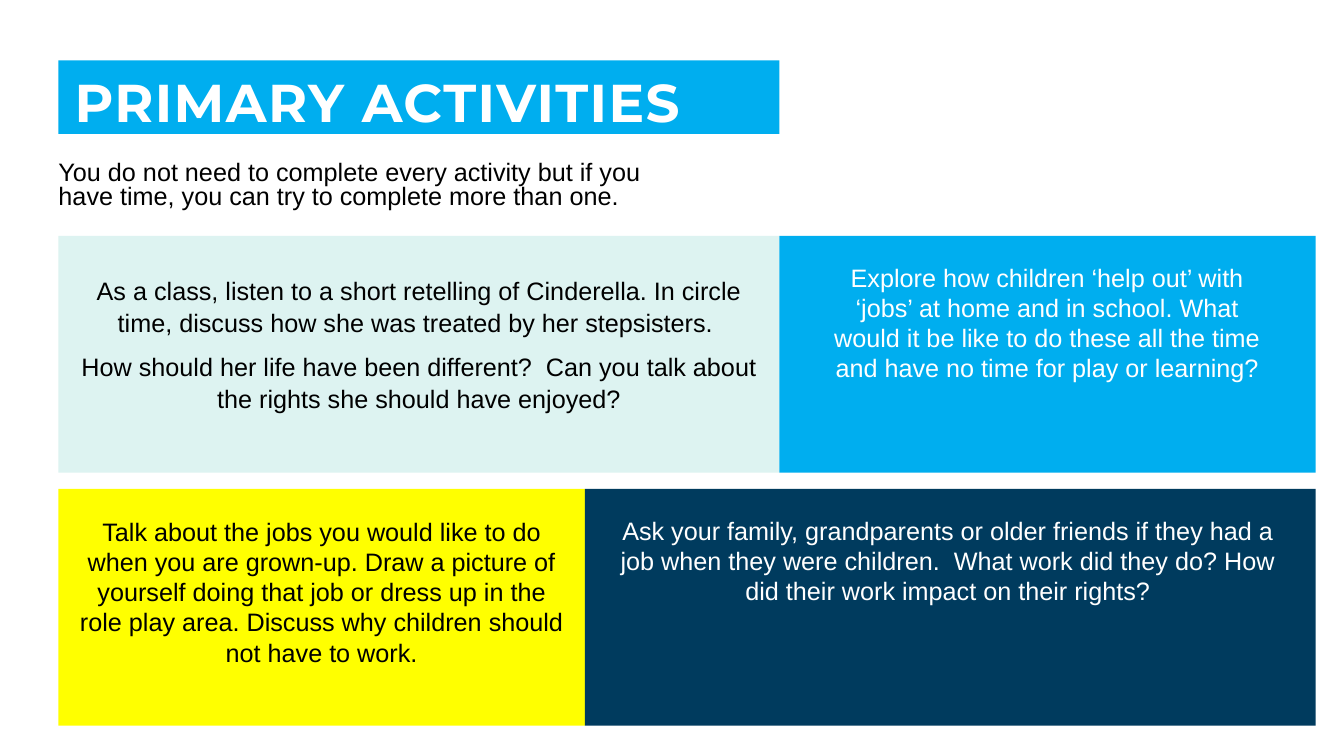
import pptx
import pptx.util
from pptx.dml.color import RGBColor
from pptx.enum.shapes import MSO_SHAPE
from pptx.enum.text import MSO_ANCHOR, PP_ALIGN

PX = 9144  # 100 px to the inch

BLACK = RGBColor(0x00, 0x00, 0x00)
WHITE = RGBColor(0xFF, 0xFF, 0xFF)
SKY = RGBColor(0x00, 0xAE, 0xEF)
MINT = RGBColor(0xDD, 0xF3, 0xF1)
YELLOW = RGBColor(0xFF, 0xFF, 0x00)
NAVY = RGBColor(0x00, 0x3B, 0x5E)

# Content
TITLE = "PRIMARY ACTIVITIES"
INTRO = ("You do not need to complete every activity but if you have time, "
         "you can try to complete more than one.")

# Each activity: panel width, fill, text colour, text area, line spacing,
# space after, paragraphs
ROWS = [
    [
        (715, MINT, BLACK, (69, 266, 693, 149), 1.07, 8, [
            "As a class, listen to a short retelling of Cinderella. In circle time, "
            "discuss how she was treated by her stepsisters. ",
            "How should her life have been different?  Can you talk about the rights "
            "she should have enjoyed?"]),
        (532, SKY, WHITE, (803, 255, 471, 131), 1.0, 0, [
            "Explore how children ‘help out’ with ‘jobs’ at home and in school. "
            "What would it be like to do these all the time and have no time for "
            "play or learning?"]),
    ],
    [
        (522, YELLOW, BLACK, (69, 507, 500, 192), 1.0, 0, [
            "Talk about the jobs you would like to do when you are grown-up. Draw a "
            "picture of yourself doing that job or dress up in the role play area. "
            "Discuss why children should not have to work."]),
        (725, NAVY, WHITE, (591, 506, 698, 131), 1.0, 0, [
            "Ask your family, grandparents or older friends if they had a job when "
            "they were children.  What work did they do? How did their work impact "
            "on their rights?"]),
    ],
]

LEFT = 58
ROW_TOP, ROW_HEIGHT, ROW_GAP = 234, 235, 16


def px(*lengths):
    return [pptx.util.Emu(length * PX) for length in lengths]


def add_panel(page, area, fill):
    panel = page.shapes.add_shape(MSO_SHAPE.RECTANGLE, *px(*area))
    panel.shadow.inherit = False
    panel.fill.solid()
    panel.fill.fore_color.rgb = fill
    panel.line.fill.background()
    return panel


def write(box, paragraphs, color, align, spacing, insets=(10, 5, 10, 5),
          after=0, size=18, font="Arial", bold=False):
    frame = box.text_frame
    frame.word_wrap = True
    (frame.margin_left, frame.margin_top,
     frame.margin_right, frame.margin_bottom) = px(*insets)
    for index, text in enumerate(paragraphs):
        para = frame.add_paragraph() if index else frame.paragraphs[0]
        para.text = text
        para.alignment = align
        para.line_spacing = spacing
        para.space_after = pptx.util.Pt(after)
        para.font.name = font
        para.font.size = pptx.util.Pt(size)
        para.font.bold = bold
        para.font.color.rgb = color


deck = pptx.Presentation()
deck.slide_width, deck.slide_height = px(1333, 750)
page = deck.slides.add_slide(deck.slide_layouts[6])

# Title banner, letters spaced by one point
banner = add_panel(page, (LEFT, 60, 715, 73), SKY)
write(banner, [TITLE], WHITE, PP_ALIGN.LEFT, 0.9, insets=(16, 16, 12, 0),
      size=38, font="Montserrat", bold=True)
banner.text_frame.vertical_anchor = MSO_ANCHOR.MIDDLE
title_span = banner.text_frame.paragraphs[0].runs[0]
title_span.font._element.set("spc", "100")

# Introduction
intro = page.shapes.add_textbox(*px(LEFT, 156, 621, 62))
write(intro, [INTRO], BLACK, PP_ALIGN.LEFT, 0.8, insets=(0, 5, 10, 5))

# Activity panels, side by side in each row, with their text on top
for row_index, row in enumerate(ROWS):
    left = LEFT
    top = ROW_TOP + row_index * (ROW_HEIGHT + ROW_GAP)
    for width, fill, color, text_area, spacing, after, paragraphs in row:
        add_panel(page, (left, top, width, ROW_HEIGHT), fill)
        box = page.shapes.add_textbox(*px(*text_area))
        write(box, paragraphs, color, PP_ALIGN.CENTER, spacing, after=after)
        left += width

deck.save("out.pptx")
